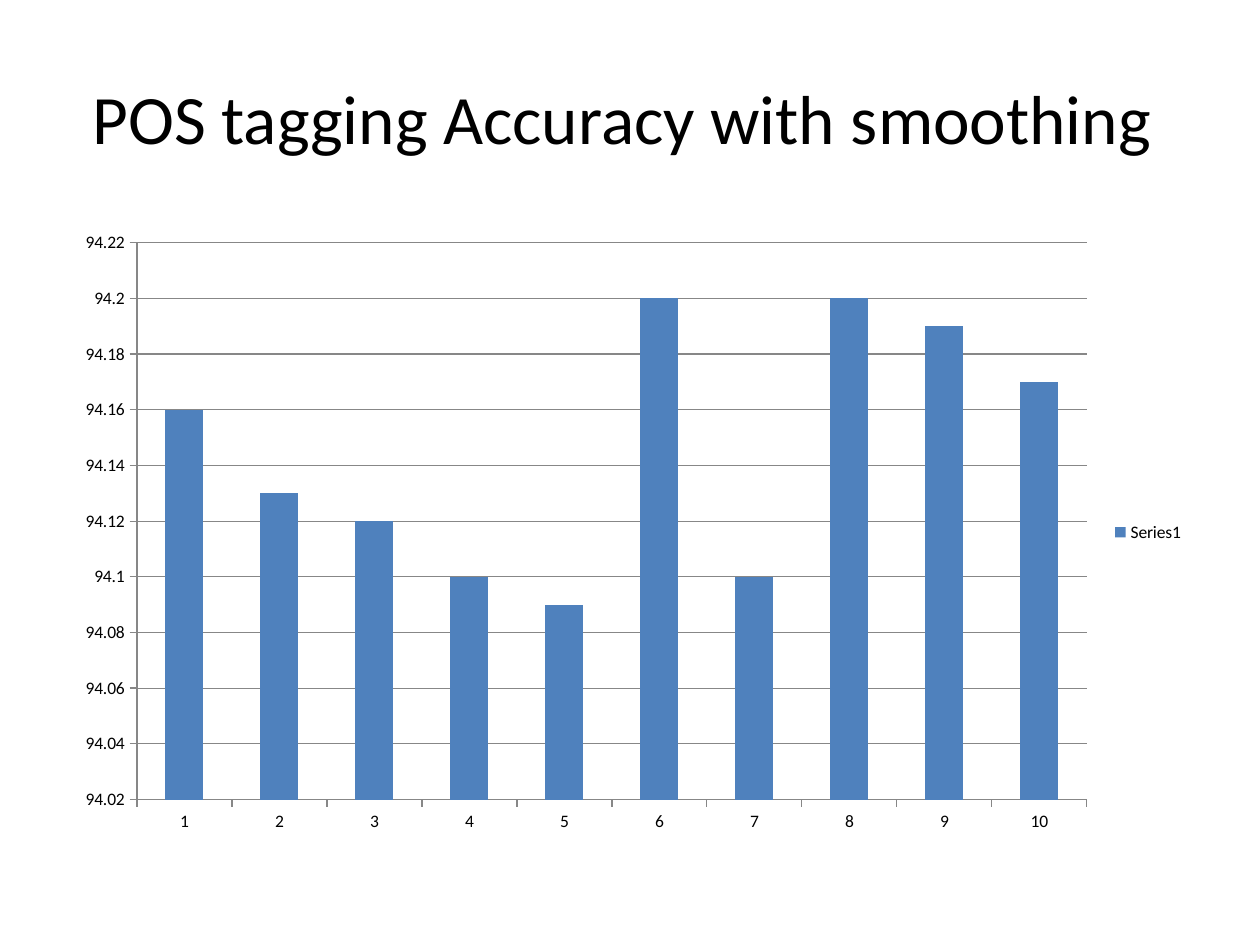
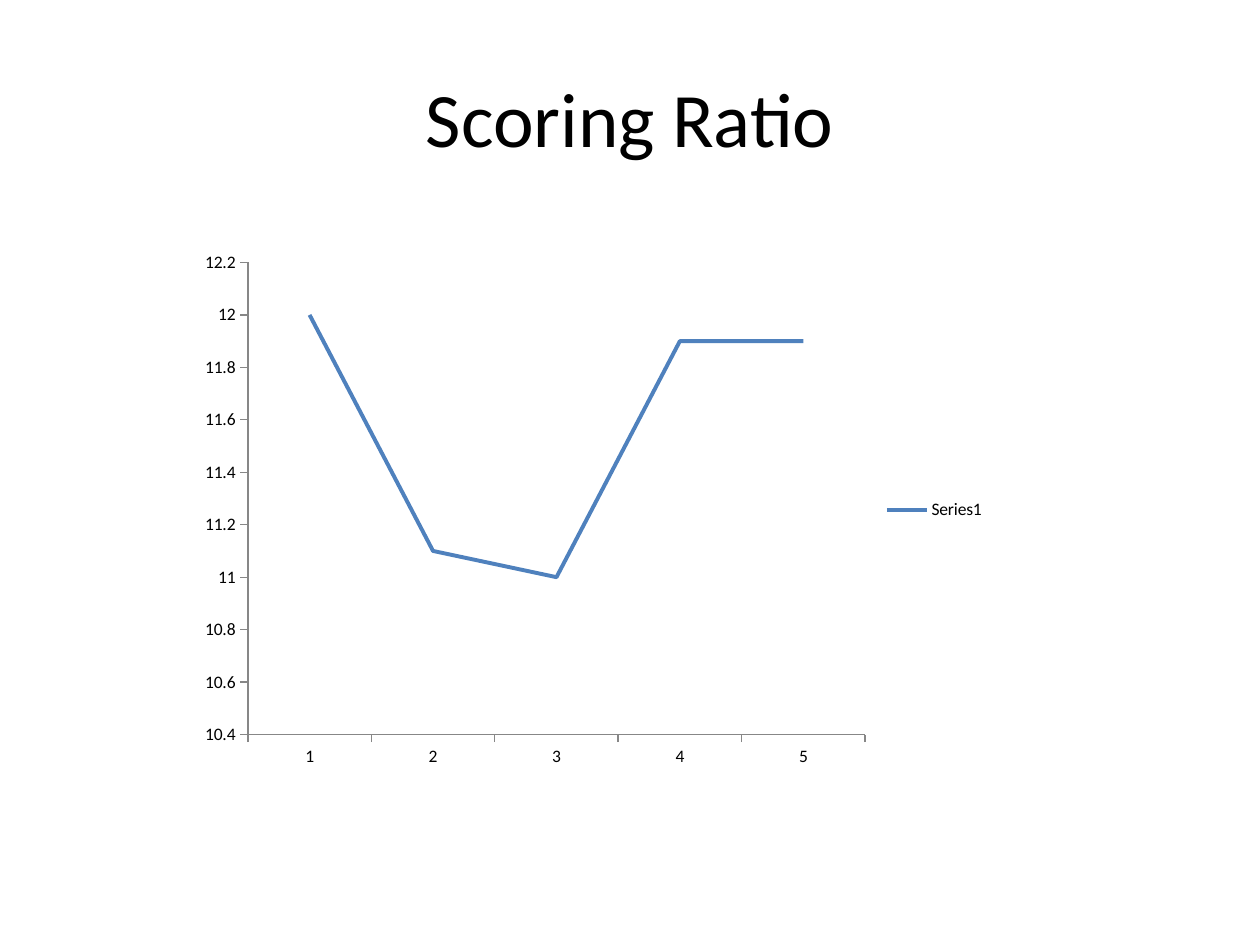
from pptx import Presentation
from pptx.chart.data import CategoryChartData
from pptx.dml.color import RGBColor
from pptx.enum.chart import XL_CHART_TYPE, XL_LEGEND_POSITION, XL_TICK_MARK
from pptx.enum.text import MSO_ANCHOR, MSO_AUTO_SIZE, PP_ALIGN
from pptx.util import Inches, Pt

BLACK = RGBColor(0x00, 0x00, 0x00)
BLUE = RGBColor(0x4F, 0x81, 0xBD)
GRAY = RGBColor(0x87, 0x87, 0x87)
FONT = "Calibri"
COLUMN = XL_CHART_TYPE.COLUMN_CLUSTERED
LINE = XL_CHART_TYPE.LINE_STACKED
RIGHT = XL_LEGEND_POSITION.RIGHT
OUTSIDE = XL_TICK_MARK.OUTSIDE
CENTER = PP_ALIGN.CENTER
MIDDLE = MSO_ANCHOR.MIDDLE
NO_FIT = MSO_AUTO_SIZE.NONE
TITLE_ONLY = 5

ACCURACY = (94.16, 94.13, 94.12, 94.1, 94.09,
            94.2, 94.1, 94.2, 94.19, 94.17)
RATIO = (12, 11.1, 11, 11.9, 11.9)


class Deck:
    def __init__(self):
        self.prs = Presentation()
        self.prs.slide_width = Inches(10)
        self.prs.slide_height = Inches(7.5)
        self.slide = None

    def style(self, font, size):
        font.name = FONT
        font.size = Pt(size)
        font.color.rgb = BLACK

    def start(self, text, size):
        """Add a slide with its title."""
        layout = self.prs.slide_layouts[TITLE_ONLY]
        self.slide = self.prs.slides.add_slide(layout)
        title = self.slide.shapes.title
        title.left, title.top = Inches(0.5), Inches(0.3)
        title.width, title.height = Inches(9), Inches(1.25)
        frame = title.text_frame
        frame.text = text
        frame.auto_size = NO_FIT
        frame.vertical_anchor = MIDDLE
        para = frame.paragraphs[0]
        para.alignment = CENTER
        self.style(para.runs[0].font, size)

    def axis(self, axis, grid):
        axis.major_tick_mark = OUTSIDE
        axis.has_major_gridlines = grid
        lines = [axis.format.line]
        if grid:
            lines.append(axis.major_gridlines.format.line)
        for line in lines:
            line.color.rgb = GRAY
            line.width = Pt(0.75)

    def chart(self, kind, box, values, low, high, step, grid=False):
        data = CategoryChartData()
        data.categories = [str(n) for n in range(1, len(values) + 1)]
        data.add_series("Series1", values)
        place = [Inches(side) for side in box]
        chart = self.slide.shapes.add_chart(kind, *place, data).chart
        self.style(chart.font, 10)
        chart.has_title = False
        chart.has_legend = True
        chart.legend.position = RIGHT
        chart.legend.include_in_layout = False
        self.axis(chart.category_axis, False)
        scale = chart.value_axis
        self.axis(scale, grid)
        scale.minimum_scale, scale.maximum_scale = low, high
        scale.major_unit = step
        scale.tick_labels.number_format = "General"
        scale.tick_labels.number_format_is_linked = False
        plot = chart.plots[0]
        plot.vary_by_categories = False
        return plot

    def columns(self, *args):
        plot = self.chart(COLUMN, *args, grid=True)
        plot.gap_width = 150
        fill = plot.series[0].format.fill
        fill.solid()
        fill.fore_color.rgb = BLUE

    def line(self, *args):
        series = self.chart(LINE, *args).series[0]
        series.smooth = False
        series.format.line.color.rgb = BLUE
        series.format.line.width = Pt(2.25)


def main():
    deck = Deck()
    deck.start("POS tagging Accuracy with smoothing ", 39.6)
    deck.columns((0.5, 1.75, 9, 4.95), ACCURACY, 94.02, 94.22, 0.02)
    deck.start("Scoring Ratio", 44)
    deck.line((1.5, 1.92, 6.42, 4.25), RATIO, 10.4, 12.2, 0.2)
    deck.prs.save("out.pptx")


if __name__ == "__main__":
    main()
